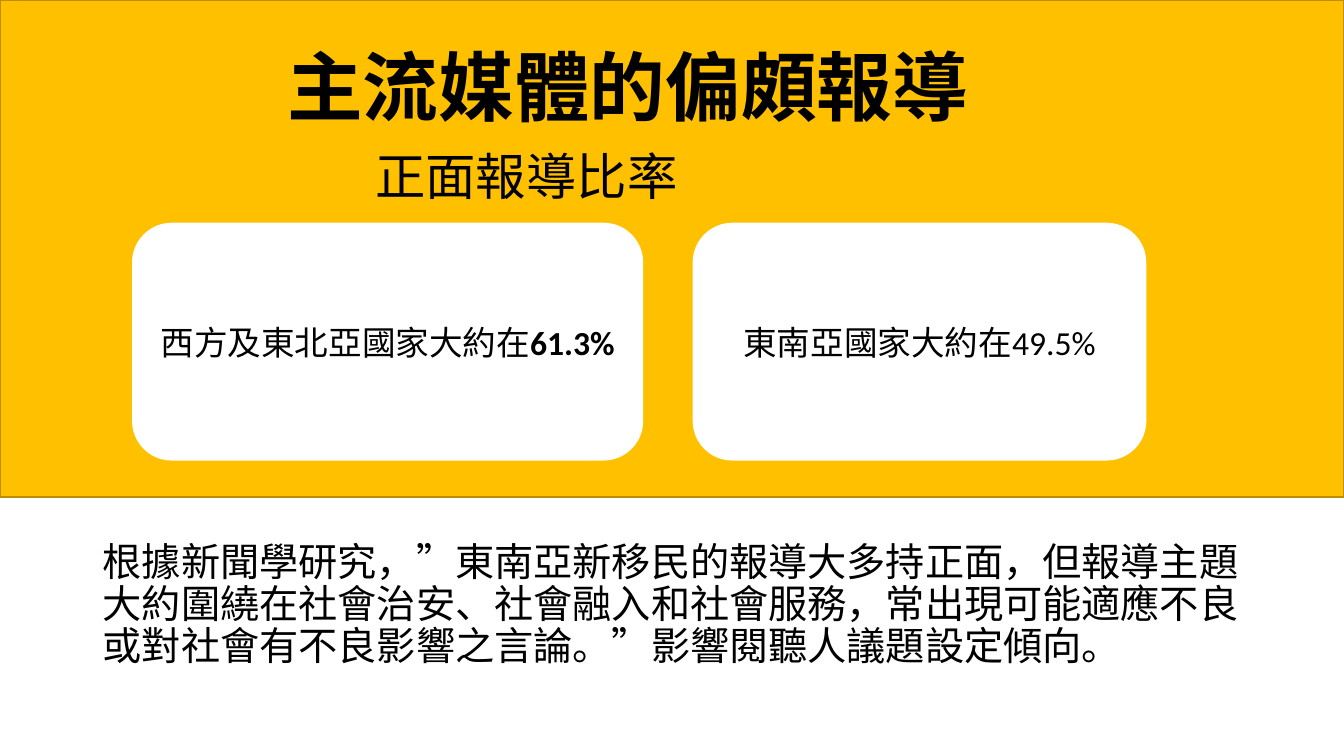
from lxml.etree import SubElement
from pptx import Presentation
from pptx.dml.color import RGBColor
from pptx.enum.shapes import MSO_SHAPE
from pptx.enum.text import MSO_ANCHOR, MSO_AUTO_SIZE, PP_ALIGN
from pptx.oxml.ns import qn
from pptx.util import Inches, Pt

CJK_FONT = "Noto Sans CJK SC"
LATIN_FONT = "Calibri"


def color(hex_value):
    return RGBColor.from_string(hex_value)


class MediaSlide:
    """Holds the slide and its yellow, white and black style."""

    yellow, border, white, black, outline = "FFC000", "BD8E00", "FFFFFF", "000000", "AFABAB"

    def __init__(self, presentation):
        self.slide = presentation.slides.add_slide(presentation.slide_layouts[1])
        self.title_shape = self.slide.shapes.title
        self.body_shape = self.slide.placeholders[1]

    def format_run(self, run, size, font=CJK_FONT, bold=False, outlined=False):
        run.font.size = Pt(size)
        run.font.bold = bold
        run.font.color.rgb = color(self.black)
        run.font.name = font
        properties = run.font._element
        east_asian = SubElement(properties, qn("a:ea"), typeface=CJK_FONT)
        properties.find(qn("a:latin")).addnext(east_asian)
        if outlined:
            line = SubElement(properties, qn("a:ln"), w=str(Pt(0.75)))
            fill = SubElement(line, qn("a:solidFill"))
            SubElement(fill, qn("a:srgbClr"), val=self.outline)
            properties.insert(0, line)

    def place(self, shape, left, top, width, height, anchor):
        shape.left, shape.top = Inches(left), Inches(top)
        shape.width, shape.height = Inches(width), Inches(height)
        frame = shape.text_frame
        frame.word_wrap = True
        frame.auto_size = MSO_AUTO_SIZE.NONE
        frame.vertical_anchor = anchor
        return frame

    def format_paragraph(self, paragraph, space_before=0, indent=0):
        """Left-align without a bullet, indented by a length in inches."""
        paragraph.alignment = PP_ALIGN.LEFT
        paragraph.line_spacing = 0.9
        paragraph.space_before = Pt(space_before)
        properties = paragraph._p.get_or_add_pPr()
        properties.set("marL", str(Inches(indent)))
        properties.set("indent", "0")
        SubElement(properties, qn("a:buNone"))

    def add_shape(self, kind, left, top, width, height, fill, line=None):
        shape = self.slide.shapes.add_shape(
            kind, Inches(left), Inches(top), Inches(width), Inches(height))
        shape.shadow.inherit = False
        shape.fill.solid()
        shape.fill.fore_color.rgb = color(fill)
        if line:
            shape.line.color.rgb = color(line)
            shape.line.width = Pt(1)
        else:
            shape.line.fill.background()
        return shape

    def add_band(self, width, height):
        """Add the yellow band behind the title."""
        band = self.add_shape(MSO_SHAPE.RECTANGLE, 0, 0, width, height, self.yellow, self.border)
        self.title_shape.element.addprevious(band.element)

    def set_title(self, heading, subtitle):
        frame = self.place(self.title_shape, 2.75, 0.55, 11.5, 1.45, MSO_ANCHOR.MIDDLE)
        frame.text = heading
        self.format_paragraph(frame.paragraphs[0])
        self.format_run(frame.paragraphs[0].runs[0], 54, bold=True, outlined=True)
        paragraph = frame.add_paragraph()
        paragraph.text = subtitle
        self.format_paragraph(paragraph, space_before=14, indent=0.87)
        self.format_run(paragraph.runs[0], 36, LATIN_FONT)

    def set_body(self, text):
        frame = self.place(self.body_shape, 0.92, 5.33, 11.5, 4.76, MSO_ANCHOR.TOP)
        frame.text = text
        self.format_paragraph(frame.paragraphs[0], space_before=10)
        self.format_run(frame.paragraphs[0].runs[0], 28)

    def add_card(self, left, width, label, rate, bold_rate):
        card = self.add_shape(MSO_SHAPE.ROUNDED_RECTANGLE, left, 2.21, width, 2.36, self.white)
        card.text_frame.vertical_anchor = MSO_ANCHOR.MIDDLE
        paragraph = card.text_frame.paragraphs[0]
        paragraph.alignment = PP_ALIGN.CENTER
        for text, bold in ((label, False), (rate, bold_rate)):
            run = paragraph.add_run()
            run.text = text
            self.format_run(run, 24, LATIN_FONT, bold)


def main():
    presentation = Presentation()
    presentation.slide_width, presentation.slide_height = Inches(13.33), Inches(7.5)
    slide = MediaSlide(presentation)
    slide.add_band(13.33, 4.93)
    slide.set_title("主流媒體的偏頗報導", "正面報導比率")
    slide.set_body(
        "根據新聞學研究，”東南亞新移民的報導大多持正面，但報導主題"
        "大約圍繞在社會治安、社會融入和社會服務，常出現可能適應不良"
        "或對社會有不良影響之言論。”影響閱聽人議題設定傾向。")
    slide.add_card(1.31, 5.07, "西方及東北亞國家大約在", "61.3%", True)
    slide.add_card(6.87, 4.5, "東南亞國家大約在", "49.5%", False)
    presentation.save("out.pptx")


if __name__ == "__main__":
    main()
